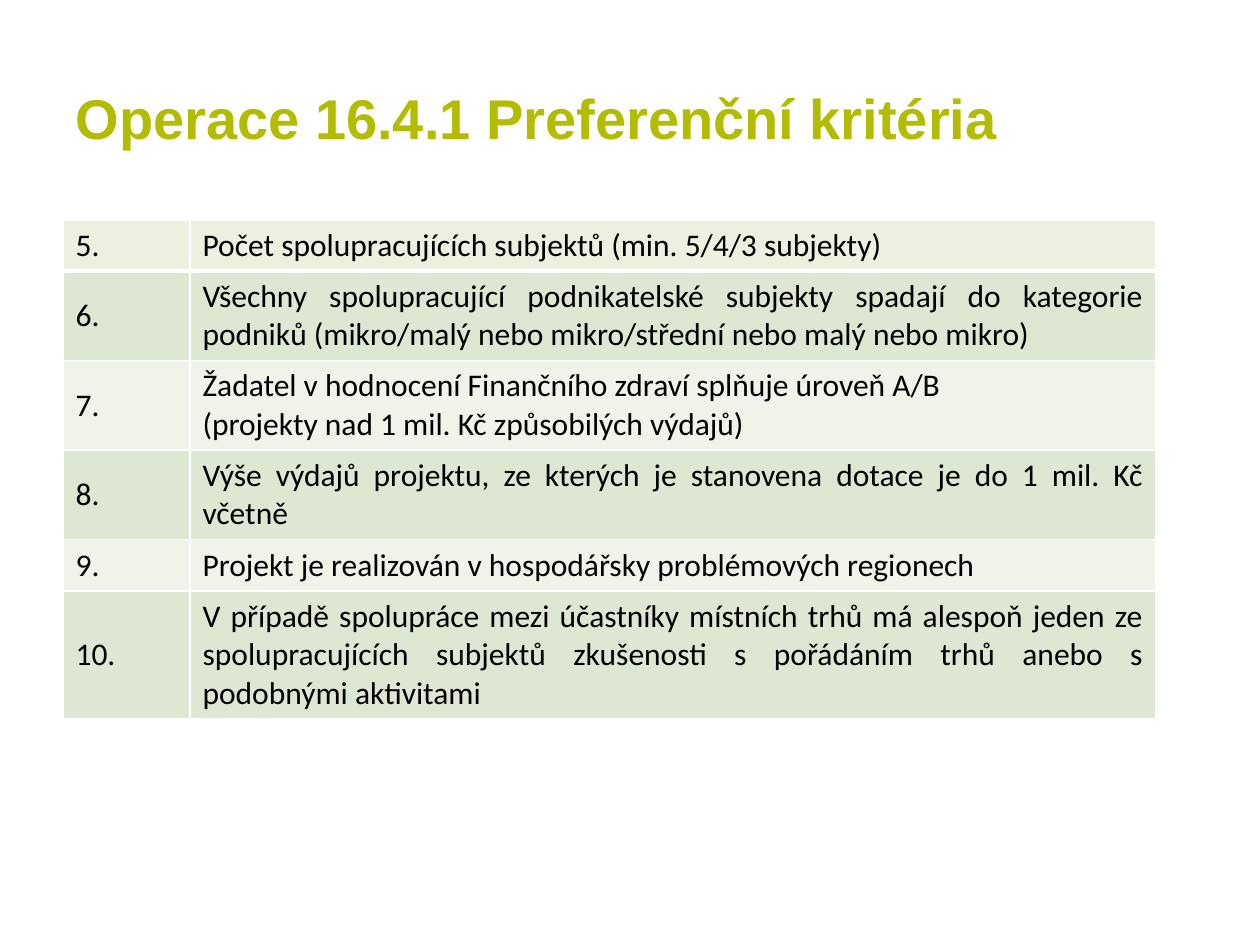
from dataclasses import dataclass

from pptx import Presentation
from pptx.dml.color import RGBColor
from pptx.enum.text import MSO_ANCHOR, PP_ALIGN
from pptx.oxml import parse_xml
from pptx.oxml.ns import nsdecls
from pptx.util import Emu, Pt

MIDDLE = MSO_ANCHOR.MIDDLE
LEFT, JUSTIFY = PP_ALIGN.LEFT, PP_ALIGN.JUSTIFY
PX = 914400 / 126
TITLE_ONLY_LAYOUT = 5


@dataclass(frozen=True)
class Theme:
    title_color: str = "B2BC00"
    text_color: str = "000000"
    border_color: str = "FFFFFF"
    first_row: str = "EBF1DE"
    bands: tuple = ("EFF3EA", "DEE7D1")
    title_font: str = "Arial"
    table_font: str = "Calibri"
    title_size: int = 32
    table_size: int = 18
    border_width: int = 1
    first_row_border_width: int = 3


THEME = Theme()
TITLE_FORMAT = {"name": THEME.title_font, "size": Pt(THEME.title_size), "bold": True}
TABLE_FORMAT = {"name": THEME.table_font, "size": Pt(THEME.table_size), "bold": False}

TITLE = "Operace 16.4.1 Preferenční kritéria"
FIRST_NUMBER = 5
CRITERIA = [
    "Počet spolupracujících subjektů (min. 5/4/3 subjekty)",
    "Všechny spolupracující podnikatelské subjekty spadají do kategorie podniků "
    "(mikro/malý nebo mikro/střední nebo malý nebo mikro)",
    "Žadatel v hodnocení Finančního zdraví splňuje úroveň A/B \n"
    "(projekty nad 1 mil. Kč způsobilých výdajů)",
    "Výše výdajů projektu, ze kterých je stanovena dotace je do 1 mil. Kč včetně",
    "Projekt je realizován v hospodářsky problémových regionech",
    "V případě spolupráce mezi účastníky místních trhů má alespoň jeden ze "
    "spolupracujících subjektů zkušenosti s pořádáním trhů anebo s podobnými aktivitami",
]
COLUMN_WIDTHS = (127, 966)
ROW_HEIGHT = 51


def px(value):
    return Emu(round(value * PX))


def write_text(text_frame, text, alignment, color, font_format):
    text_frame.text = text
    for paragraph in text_frame.paragraphs:
        paragraph.alignment = alignment
        for name, value in font_format.items():
            setattr(paragraph.font, name, value)
        paragraph.font.color.rgb = RGBColor.from_string(color)


def add_title(slide):
    title = slide.shapes.title
    box = {"left": 63, "top": 38, "width": 1134, "height": 158}
    for name, value in box.items():
        setattr(title, name, px(value))
    title.text_frame.vertical_anchor = MIDDLE
    write_text(title.text_frame, TITLE, LEFT, THEME.title_color, TITLE_FORMAT)


def set_borders(cell, widths):
    """Draw the cell edges; widths maps L, R, T and B, in that order, to points."""
    properties = cell._tc.get_or_add_tcPr()
    for side, width in widths.items():
        properties.append(parse_xml(
            f'<a:ln{side} {nsdecls("a")} w="{Pt(width)}"><a:solidFill>'
            f'<a:srgbClr val="{THEME.border_color}"/></a:solidFill></a:ln{side}>'))


def format_cell(cell, text, alignment, fill, borders):
    set_borders(cell, borders)
    cell.fill.solid()
    cell.fill.fore_color.rgb = RGBColor.from_string(fill)
    cell.vertical_anchor = MIDDLE
    write_text(cell.text_frame, text, alignment, THEME.text_color, TABLE_FORMAT)


def add_criteria_table(slide):
    row_count = len(CRITERIA)
    table = slide.shapes.add_table(
        row_count, len(COLUMN_WIDTHS), px(63), px(220),
        px(sum(COLUMN_WIDTHS)), px(ROW_HEIGHT * row_count)).table
    for column, width in zip(table.columns, COLUMN_WIDTHS):
        column.width = px(width)
    for index, criterion in enumerate(CRITERIA):
        is_first = index == 0
        fill = THEME.first_row if is_first else THEME.bands[index % 2]
        thin, thick = THEME.border_width, THEME.first_row_border_width
        borders = {"L": thin, "R": thin,
                   "T": thick if index == 1 else thin,
                   "B": thick if is_first else thin}
        number_cell, criterion_cell = table.rows[index].cells
        format_cell(number_cell, f"{FIRST_NUMBER + index}.",
                    JUSTIFY if is_first else LEFT, fill, borders)
        format_cell(criterion_cell, criterion, JUSTIFY, fill, borders)


def main():
    presentation = Presentation()
    presentation.slide_width, presentation.slide_height = px(1260), px(945)
    slide = presentation.slides.add_slide(presentation.slide_layouts[TITLE_ONLY_LAYOUT])
    add_title(slide)
    add_criteria_table(slide)
    presentation.save("out.pptx")


if __name__ == "__main__":
    main()
